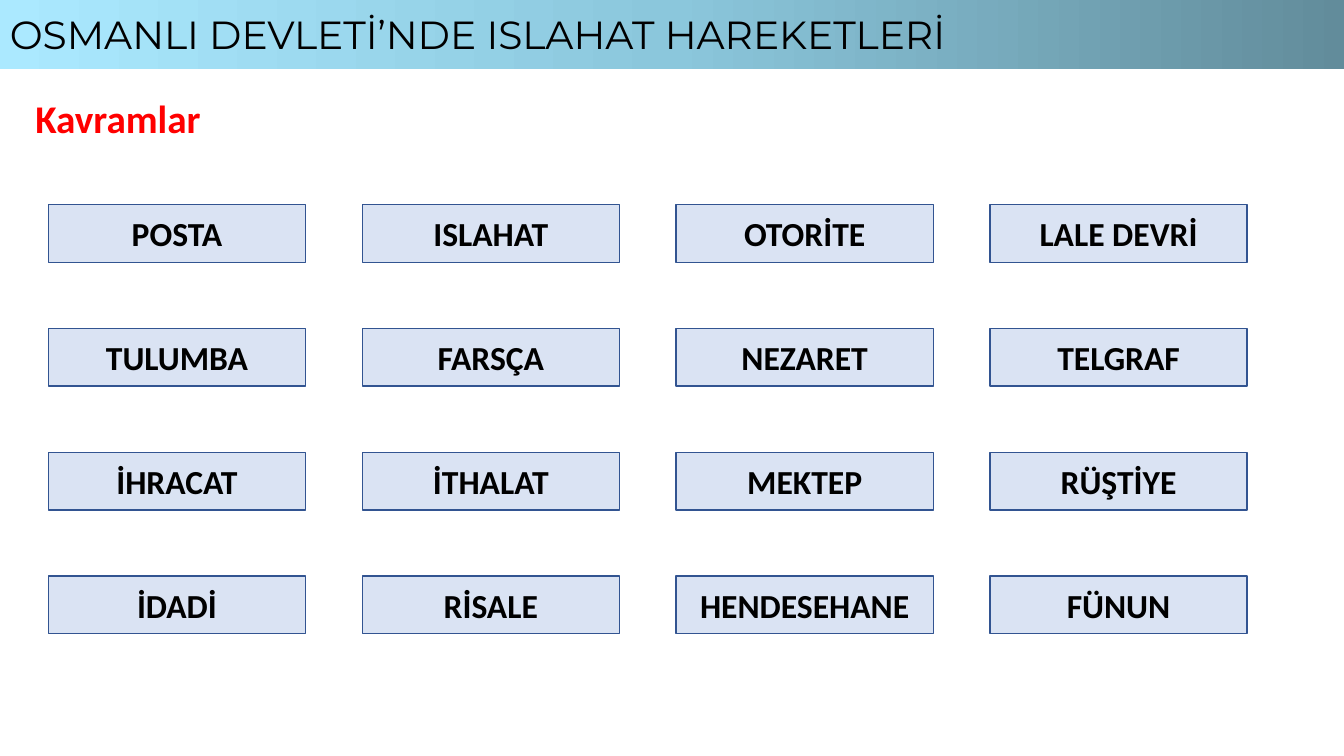
from lxml import etree
from pptx import Presentation
from pptx.dml.color import RGBColor
from pptx.enum.shapes import MSO_SHAPE
from pptx.enum.text import MSO_ANCHOR, MSO_AUTO_SIZE, PP_ALIGN
from pptx.oxml.ns import qn
from pptx.util import Cm, Pt

RECTANGLE = MSO_SHAPE.RECTANGLE
MIDDLE = MSO_ANCHOR.MIDDLE
GROW = MSO_AUTO_SIZE.SHAPE_TO_FIT_TEXT
LEFT, CENTER = PP_ALIGN.LEFT, PP_ALIGN.CENTER

SLIDE_WIDTH, SLIDE_HEIGHT = 33.87, 19.05
BANNER_STOPS = [(0, "628C9B"), (50, "8BC7DC"), (100, "ABE9FF")]
BANNER_FONT = {"name": "Montserrat", "size": Pt(28), "bold": False}
HEADING_FONT = {"name": "Calibri", "size": Pt(28), "bold": True}
CONCEPT_FONT = {"name": "Calibri", "size": Pt(24), "bold": True}

CONCEPTS = [
    ["POSTA", "ISLAHAT", "OTORİTE", "LALE DEVRİ"],
    ["TULUMBA", "FARSÇA", "NEZARET", "TELGRAF"],
    ["İHRACAT", "İTHALAT", "MEKTEP", "RÜŞTİYE"],
    ["İDADİ", "RİSALE", "HENDESEHANE", "FÜNUN"],
]
GRID_LEFT, GRID_TOP = 1.22, 5.16
COLUMN_STEP, ROW_STEP = 7.91, 3.12
CONCEPT_WIDTH, CONCEPT_HEIGHT = 6.48, 1.45


def rgb(hex_color):
    """Turn a hex string into a colour."""
    return RGBColor.from_string(hex_color)


def write(frame, text, font_format, color, align):
    """Put one formatted paragraph into a text frame."""
    paragraph = frame.paragraphs[0]
    paragraph.alignment = align
    run = paragraph.add_run()
    run.text = text
    for attribute, value in font_format.items():
        setattr(run.font, attribute, value)
    run.font.color.rgb = rgb(color)


def add_rectangle(slide, left, top, width, height):
    """Add a shadowless rectangle with vertically centred text."""
    rectangle = slide.shapes.add_shape(RECTANGLE, Cm(left), Cm(top), Cm(width), Cm(height))
    rectangle.shadow.inherit = False
    rectangle.text_frame.vertical_anchor = MIDDLE
    rectangle.text_frame.word_wrap = True
    return rectangle


def add_banner(slide, text):
    """Add the gradient title band across the top."""
    banner = add_rectangle(slide, 0, 0, SLIDE_WIDTH, 1.73)
    banner.line.fill.background()
    banner.fill.gradient()
    banner.fill.gradient_angle = 180
    stop_list = next(banner.element.spPr.iter(qn("a:gsLst")))
    for stop in list(stop_list):
        stop_list.remove(stop)
    for percent, color in BANNER_STOPS:
        stop = etree.SubElement(stop_list, qn("a:gs"), pos=str(percent * 1000))
        etree.SubElement(stop, qn("a:srgbClr"), val=color)
    write(banner.text_frame, text, BANNER_FONT, "000000", LEFT)


def add_heading(slide, text):
    """Add the red heading above the grid."""
    heading = slide.shapes.add_textbox(Cm(0.64), Cm(2.24), Cm(4.72), Cm(1.45))
    heading.text_frame.word_wrap = False
    heading.text_frame.auto_size = GROW
    write(heading.text_frame, text, HEADING_FONT, "FF0000", LEFT)


def add_concept(slide, text, row, column):
    """Add one concept box at its grid position."""
    concept = add_rectangle(slide, GRID_LEFT + column * COLUMN_STEP,
                            GRID_TOP + row * ROW_STEP, CONCEPT_WIDTH, CONCEPT_HEIGHT)
    concept.fill.solid()
    concept.fill.fore_color.rgb = rgb("DAE3F3")
    concept.line.color.rgb = rgb("325491")
    concept.line.width = Pt(1)
    write(concept.text_frame, text, CONCEPT_FONT, "000000", CENTER)


def main():
    """Build the concepts slide and save it."""
    presentation = Presentation()
    presentation.slide_width = Cm(SLIDE_WIDTH)
    presentation.slide_height = Cm(SLIDE_HEIGHT)
    slide = presentation.slides.add_slide(presentation.slide_layouts[6])
    add_heading(slide, "Kavramlar")
    for row, concepts in enumerate(CONCEPTS):
        for column, concept in enumerate(concepts):
            add_concept(slide, concept, row, column)
    add_banner(slide, "OSMANLI DEVLETİ’NDE ISLAHAT HAREKETLERİ")
    presentation.save("out.pptx")


if __name__ == "__main__":
    main()
